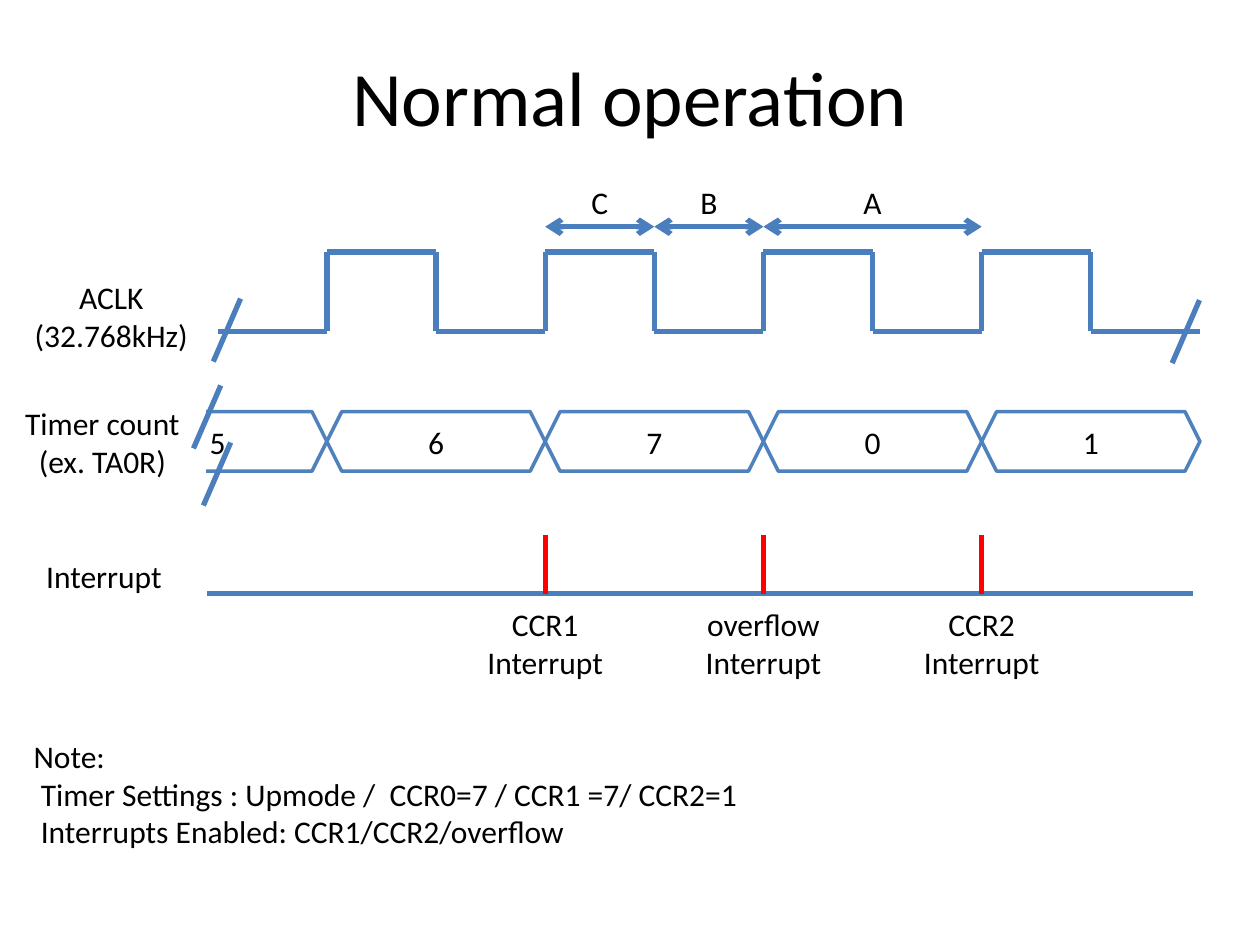
from dataclasses import dataclass

from pptx import Presentation, util as u
from pptx.dml.color import RGBColor
from pptx.enum import shapes, text
from pptx.oxml import ns, xmlchemy


@dataclass(frozen=True)
class Theme:
    font: str = "Calibri"
    ink: str = "000000"
    paper: str = "FFFFFF"
    signal: str = "4B7EBC"
    outline: str = "4F81BD"
    event: str = "FF0000"
    body_size: int = 18
    title_size: int = 44
    line_width: int = 3
    outline_width: int = 2


THEME = Theme()

# Time axis and signal levels, in centimetres
START, HALF_PERIOD = 4.39, 2.2
CLOCK_HIGH, CLOCK_LOW = 5.08, 6.68
COUNT_TOP, COUNT_HEIGHT = 8.3, 1.2
INTERRUPT_TOP, INTERRUPT_BASE = 10.78, 11.97
SLASH_WIDTH, SLASH_HEIGHT = 0.55, 1.27


def edge(number):
    """Horizontal place of a clock edge."""
    return START + number * HALF_PERIOD


def set_values(target, values):
    for name, value in values.items():
        setattr(target, name, value)


def add_line(slide, x1, y1, x2, y2, color=THEME.signal, arrows=False):
    connector = slide.shapes.add_connector(
        shapes.MSO_CONNECTOR.STRAIGHT, u.Cm(x1), u.Cm(y1), u.Cm(x2), u.Cm(y2))
    connector.line.color.rgb = RGBColor.from_string(color)
    connector.line.width = u.Pt(THEME.line_width)
    if arrows:
        line = connector.line._get_or_add_ln()
        for tag in ("a:headEnd", "a:tailEnd"):
            end = xmlchemy.OxmlElement(tag)
            end.set("type", "arrow")
            line.append(end)
    properties = connector._element.find(ns.qn("p:spPr"))
    properties.append(xmlchemy.OxmlElement("a:effectLst"))


def write_lines(frame, lines, align, size=THEME.body_size):
    for number, line in enumerate(lines):
        paragraph = frame.add_paragraph() if number else frame.paragraphs[0]
        paragraph.alignment = align
        run = paragraph.add_run()
        run.text = line
        set_values(run.font, {"name": THEME.font, "size": u.Pt(size)})
        run.font.color.rgb = RGBColor.from_string(THEME.ink)


def add_label(slide, left, top, width, height, lines,
              align=text.PP_ALIGN.CENTER):
    box = slide.shapes.add_textbox(u.Cm(left), u.Cm(top), u.Cm(width), u.Cm(height))
    set_values(box.text_frame, {
        "word_wrap": False,
        "auto_size": text.MSO_AUTO_SIZE.SHAPE_TO_FIT_TEXT,
    })
    write_lines(box.text_frame, lines, align)


def add_title(slide, title):
    box = slide.shapes.add_textbox(u.Cm(1.27), u.Cm(0.76), u.Cm(22.86), u.Cm(2.36))
    set_values(box.text_frame, {
        "word_wrap": True,
        "vertical_anchor": text.MSO_ANCHOR.MIDDLE,
    })
    write_lines(box.text_frame, [title], text.PP_ALIGN.CENTER, THEME.title_size)


def add_block(slide, kind, left, top, width, height, outline):
    shape = slide.shapes.add_shape(
        kind, u.Cm(left), u.Cm(top), u.Cm(width), u.Cm(height))
    shape.shadow.inherit = False
    shape.fill.solid()
    shape.fill.fore_color.rgb = RGBColor.from_string(THEME.paper)
    shape.line.color.rgb = RGBColor.from_string(outline)
    shape.line.width = u.Pt(THEME.outline_width)
    return shape


def add_break(slide, x, y):
    """Slash that marks where a signal is cut off."""
    add_line(slide, x, y, x - SLASH_WIDTH, y + SLASH_HEIGHT)


def add_clock(slide):
    levels = [CLOCK_LOW if half % 2 == 0 else CLOCK_HIGH for half in range(9)]
    for half, level in enumerate(levels):
        if half:
            add_line(slide, edge(half), CLOCK_LOW, edge(half), CLOCK_HIGH)
        add_line(slide, edge(half), level, edge(half + 1), level)
    add_break(slide, 4.85, 6.02)
    add_break(slide, 24.18, 6.05)


def add_counter(slide):
    for position, count in enumerate("56701"):
        cell = add_block(slide, shapes.MSO_SHAPE.HEXAGON, edge(2 * position - 1),
                         COUNT_TOP, 2 * HALF_PERIOD, COUNT_HEIGHT, THEME.outline)
        cell.text_frame.vertical_anchor = text.MSO_ANCHOR.MIDDLE
        write_lines(cell.text_frame, [count], text.PP_ALIGN.CENTER)
    # Cover the cut-off part of the first count
    add_block(slide, shapes.MSO_SHAPE.RECTANGLE, 1.9, 7.98, 2.21, 2.01, THEME.paper)
    add_break(slide, 4.45, 7.77)
    add_break(slide, 4.65, 8.92)


def add_interrupts(slide):
    add_line(slide, 24.05, INTERRUPT_BASE, 4.17, INTERRUPT_BASE)
    for number, source in ((3, "CCR1"), (5, "overflow"), (7, "CCR2")):
        x = edge(number)
        add_line(slide, x, INTERRUPT_BASE, x, INTERRUPT_TOP, THEME.event)
        add_label(slide, x - 1.44, 12.07, 2.88, 1.8, [source, "Interrupt"])


def add_intervals(slide):
    for name, first, last in (("C", 3, 4), ("B", 4, 5), ("A", 5, 7)):
        add_line(slide, edge(first), 4.57, edge(last), 4.57, arrows=True)
        middle = (edge(first) + edge(last)) / 2
        add_label(slide, middle - 0.44, 3.56, 0.88, 1.02, [name])


def main():
    presentation = Presentation()
    set_values(presentation, {"slide_width": u.Cm(25.4), "slide_height": u.Cm(19.05)})
    slide = presentation.slides.add_slide(presentation.slide_layouts[6])

    # Signals
    add_clock(slide)
    add_counter(slide)
    add_interrupts(slide)
    add_intervals(slide)

    # Signal names
    add_label(slide, 0.43, 5.49, 3.63, 1.8, ["ACLK", "(32.768kHz)"])
    add_label(slide, 0.25, 8.03, 3.63, 1.8, ["Timer count", "(ex. TA0R)"])
    add_label(slide, 0.66, 11.1, 2.87, 1.02, ["Interrupt"])

    # Title and note
    add_title(slide, "Normal operation")
    add_label(slide, 0.43, 14.73, 15.9, 2.57, [
        "Note:",
        " Timer Settings : Upmode /  CCR0=7 / CCR1 =7/ CCR2=1",
        " Interrupts Enabled: CCR1/CCR2/overflow",
    ], text.PP_ALIGN.LEFT)

    presentation.save("out.pptx")


if __name__ == "__main__":
    main()
